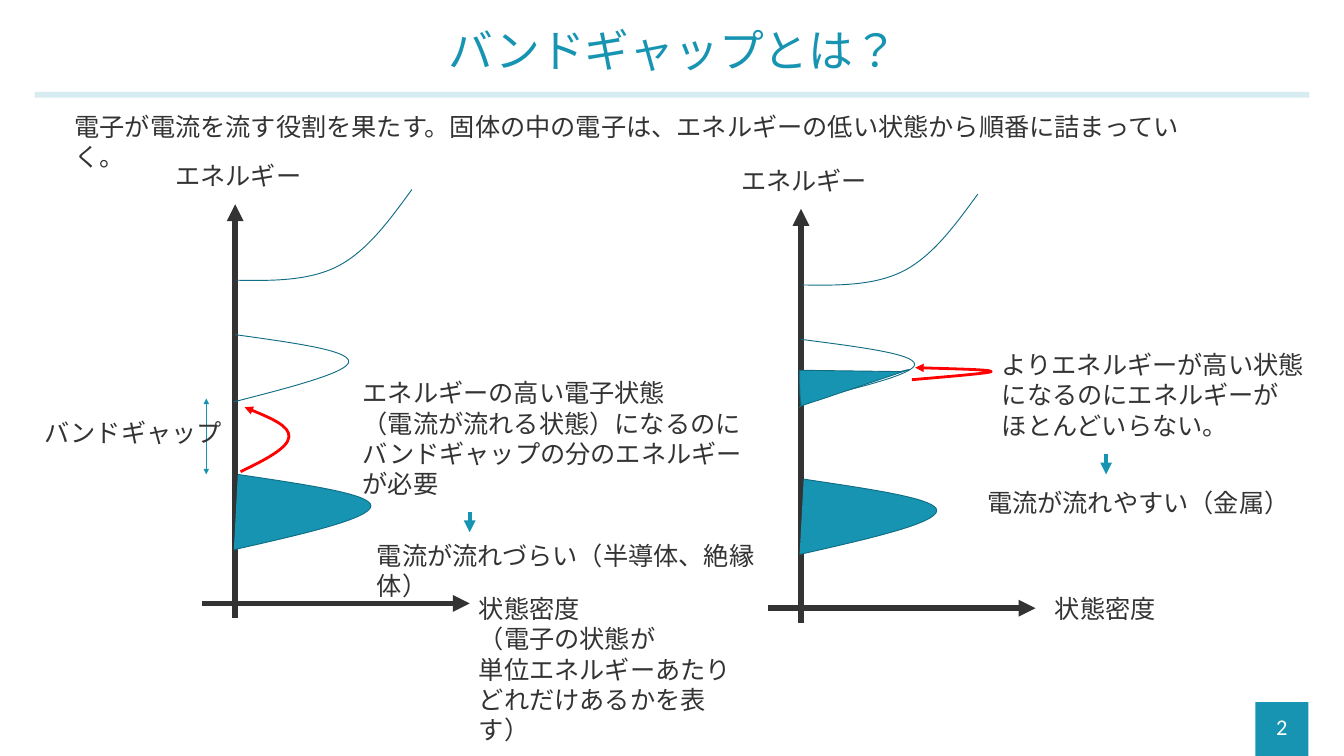
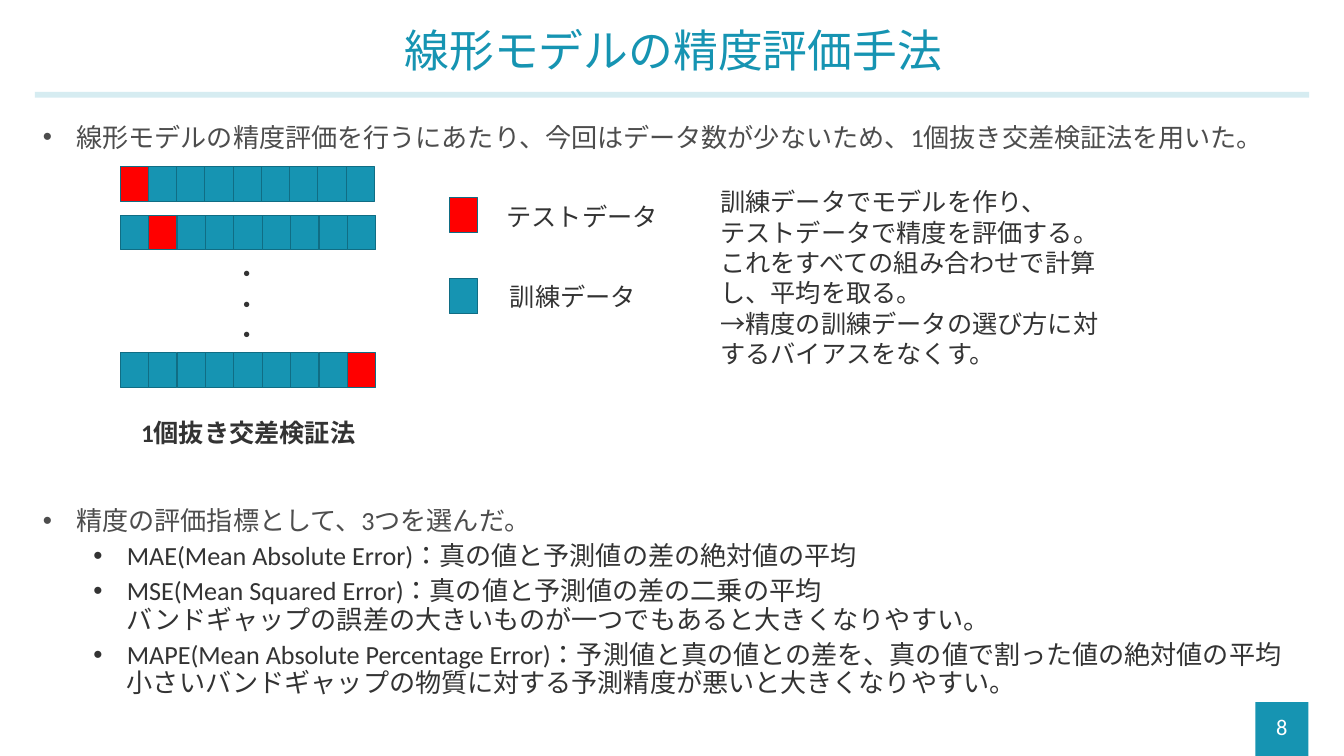
from dataclasses import dataclass

from lxml import etree
from pptx import Presentation
from pptx.dml.color import RGBColor
from pptx.enum.lang import MSO_LANGUAGE_ID
from pptx.enum.shapes import MSO_CONNECTOR, MSO_SHAPE
from pptx.enum.text import MSO_ANCHOR, MSO_AUTO_SIZE, PP_ALIGN
from pptx.oxml.ns import qn
from pptx.util import Inches, Pt

RECT = MSO_SHAPE.RECTANGLE
LINE = MSO_CONNECTOR.STRAIGHT
MIDDLE = MSO_ANCHOR.MIDDLE
CENTER = PP_ALIGN.CENTER
FIXED = MSO_AUTO_SIZE.NONE
GROW = MSO_AUTO_SIZE.SHAPE_TO_FIT_TEXT
JAPANESE = MSO_LANGUAGE_ID.JAPANESE


@dataclass(frozen=True)
class Theme:
    font: str = "Calibri"
    teal: str = "1694B2"
    edge: str = "106D84"
    pale: str = "B7DEE8"
    red: str = "FF0000"
    ink: str = "333333"
    gray: str = "4D4D4D"
    white: str = "FFFFFF"
    title: int = 48
    body: int = 28
    note: int = 27
    page: int = 24


T = Theme()
CELL_W, CELL_H = 0.42, 0.52


# Basic elements

def rgb(code):
    return RGBColor.from_string(code)


def style(par, size, color, bold=None):
    for run in par.runs:
        run.font.name = T.font
        run.font.size = Pt(size)
        run.font.color.rgb = rgb(color)
        run.font.bold = bold
        run.font.language_id = JAPANESE


def label(slide, text, x, y, w, h, size=T.note, color=T.ink, bold=None):
    box = slide.shapes.add_textbox(Inches(x), Inches(y), Inches(w), Inches(h))
    frame = box.text_frame
    frame.word_wrap = True
    frame.auto_size = GROW
    frame.text = text
    for par in frame.paragraphs:
        style(par, size, color, bold)
    return frame


def block(slide, x, y, w, h, fill, edge=None):
    shape = slide.shapes.add_shape(RECT, Inches(x), Inches(y), Inches(w), Inches(h))
    shape.shadow.inherit = False
    shape.fill.solid()
    shape.fill.fore_color.rgb = rgb(fill)
    if edge:
        shape.line.color.rgb = rgb(edge)
        shape.line.width = Pt(1)
    else:
        shape.line.fill.background()


def outline(shape, color, width, ends=()):
    shape.line.color.rgb = rgb(color)
    shape.line.width = Pt(width)
    ln = shape.element.spPr.find(qn("a:ln"))
    for end in ends:
        etree.SubElement(ln, qn(f"a:{end}"), type="triangle")
    return ln


def stroke(slide, start, stop, color, width, ends=("tailEnd",)):
    x1, y1, x2, y2 = (Inches(v) for v in (*start, *stop))
    wire = slide.shapes.add_connector(LINE, x1, y1, x2, y2)
    ln = outline(wire, color, width, ends)
    etree.SubElement(wire.element.spPr, qn("a:effectLst"))
    return ln


def curve(slide, knots, fill=None, color=T.edge, width=1, ends=(), close=False):
    """Joined cubic curves: a start, then two handles and an end for each."""
    points = [(Inches(x), Inches(y)) for x, y in knots]
    pen = slide.shapes.build_freeform(*points[0], scale=1.0)
    pen.add_line_segments(points[3::3], close=close)
    shape = pen.convert_to_shape()
    # Turn each straight segment into a cubic one
    for i, seg in enumerate(list(shape.element.iter(qn("a:lnTo")))):
        cubic = etree.Element(qn("a:cubicBezTo"))
        for x, y in points[3 * i + 1:3 * i + 4]:
            etree.SubElement(cubic, qn("a:pt"),
                             x=str(x - shape.left), y=str(y - shape.top))
        seg.getparent().replace(seg, cubic)
    shape.shadow.inherit = False
    if fill:
        shape.fill.solid()
        shape.fill.fore_color.rgb = rgb(fill)
    else:
        shape.fill.background()
    outline(shape, color, width, ends)


# Shared frame: page mark, rule and title

def start(deck, title, page):
    slide = deck.slides.add_slide(deck.slide_layouts[5])
    block(slide, 18.68, 10.45, 0.79, 0.8, T.teal)
    ln = stroke(slide, (0.52, 1.41), (19.48, 1.41), T.pale, 6.25, ())
    tint = ln.find(f"{qn('a:solidFill')}/{qn('a:srgbClr')}")
    etree.SubElement(tint, qn("a:alpha"), val="56000")

    head = slide.shapes.title
    head.left, head.top = Inches(0.54), Inches(0.16)
    head.width, head.height = Inches(18.96), Inches(1.25)
    frame = head.text_frame
    frame.text = title
    frame.auto_size = FIXED
    frame.vertical_anchor = MIDDLE
    par = frame.paragraphs[0]
    par.alignment = CENTER
    par.line_spacing = 0.9
    style(par, T.title, T.teal)

    mark = label(slide, str(page), 18.67, 10.51, 0.81, 0.6, T.page, T.white)
    mark.auto_size = FIXED
    mark.vertical_anchor = MIDDLE
    mark.paragraphs[0].alignment = CENTER
    return slide


# Band diagram with its axes crossing at (x, y)

def bands(slide, x, y, squash=1.0):
    def at(*knots):
        return [(x + dx, y + dy) for dx, dy in knots]

    stroke(slide, (x, y + 0.22), (x, y - 5.94), T.ink, 6)
    curve(slide, at((0.02, -4.81), (0.56, -4.8), (1.1, -4.8), (1.53, -5.02),
                    (1.97, -5.25), (2.3, -5.71), (2.63, -6.16)))
    label(slide, "エネルギー", x - 0.99, y - 6.64, 2.61, 0.56)
    lobe = ((0, 0), (0.85, 0.12), (1.69, 0.23), (1.69, 0.4),
            (1.69, 0.56), (0.84, 0.78), (-0.02, 1))
    curve(slide, at(*((dx, squash * dy - 4) for dx, dy in lobe)))
    curve(slide, at((0.04, -1.92), (1.04, -1.77), (2.03, -1.63), (2.02, -1.45),
                    (2.01, -1.26), (1, -1.03), (-0.02, -0.8)), T.teal)
    stroke(slide, (x - 0.49, y), (x + 3.49, y), T.ink, 6)


def gap_slide(deck):
    slide = start(deck, "バンドギャップとは？", 2)
    jump = dict(color=T.red, width=3, ends=("tailEnd",))

    # Semiconductor or insulator
    bands(slide, 3.5, 8.98)
    label(slide, "状態密度\n（電子の状態が\n単位エネルギーあたり\nどれだけあるかを表す）",
          7.03, 8.78, 4.24, 1.92)

    # Metal, with a partly filled band
    bands(slide, 11.92, 9.05, 0.93)
    label(slide, "状態密度", 15.6, 8.78, 2.61, 0.56)
    curve(slide, [(11.9, 5.51), (11.9, 5.71), (11.9, 5.92), (11.92, 6),
                  (11.95, 6.08), (11.79, 6.08), (12.04, 6),
                  (12.29, 5.92), (13.44, 5.53), (13.44, 5.53),
                  (13.67, 5.46), (13.4, 5.53), (13.4, 5.53)], T.teal, close=True)

    # Jump across the gap
    curve(slide, [(3.58, 7.02), (3.93, 6.85), (4.29, 6.67), (4.3, 6.5),
                  (4.31, 6.34), (3.98, 6.2), (3.64, 6.06)], **jump)
    label(slide, "エネルギーの高い電子状態\n（電流が流れる状態）になるのに\n"
          "バンドギャップの分のエネルギーが必要", 5.3, 5.57, 6, 1.92)
    stroke(slide, (3.07, 5.93), (3.07, 7.06), T.teal, 0.5, ("headEnd", "tailEnd"))
    label(slide, "バンドギャップ", 0.56, 6.16, 3.37, 0.56)
    label(slide, "電子が電流を流す役割を果たす。固体の中の電子は、"
          "エネルギーの低い状態から順番に詰まっていく。", 1.01, 1.61, 16.87, 0.56)

    # Jump within the band
    curve(slide, [(13.57, 5.65), (14.16, 5.6), (14.74, 5.55), (14.75, 5.53),
                  (14.76, 5.5), (14.19, 5.49), (13.62, 5.47)], **jump)
    label(slide, "よりエネルギーが高い状態になるのにエネルギーがほとんどいらない。",
          14.81, 5.15, 4.69, 1.46)

    # Conclusions
    stroke(slide, (6.99, 7.62), (6.99, 7.92), T.teal, 4.25)
    label(slide, "電流が流れづらい（半導体、絶縁体）", 5.51, 7.99, 6.21, 0.56)
    stroke(slide, (16.46, 6.76), (16.46, 7.06), T.teal, 4.25)
    label(slide, "電流が流れやすい（金属）", 14.59, 7.2, 6.21, 0.56)


# Bulleted text: rows of (level, space before, text)

def bullets(slide, rows, x, y, w, h):
    frame = label(slide, "\n".join(text for _, _, text in rows), x, y, w, h)
    frame.auto_size = FIXED
    for par, (level, space, _) in zip(frame.paragraphs, rows):
        par.level = level
        par.space_before = Pt(space)
        if level:
            par.line_spacing = 0.9
        style(par, T.body, T.ink if level else T.gray)
        props = par._p.get_or_add_pPr()
        props.set("marL", str(Inches(1.25 if level else 0.5)))
        props.set("indent", str(Inches(-0.5)))
        etree.SubElement(props, qn("a:buFont"), typeface="Arial")
        etree.SubElement(props, qn("a:buChar"), char="•")


def cell(slide, x, y, test):
    block(slide, x, y, CELL_W, CELL_H, T.red if test else T.teal, T.edge)


def score_slide(deck):
    slide = start(deck, "線形モデルの精度評価手法", 8)
    # The wide space before the second point leaves room for the diagram
    bullets(slide, [
        (0, 12, "線形モデルの精度評価を行うにあたり、今回はデータ数が少ないため、"
                "1個抜き交差検証法を用いた。"),
        (0, 377.5, "精度の評価指標として、3つを選んだ。"),
        (1, 7.5, "MAE(Mean Absolute Error)：真の値と予測値の差の絶対値の平均"),
        (1, 7.5, "MSE(Mean Squared Error)：真の値と予測値の差の二乗の平均\v"
                 "バンドギャップの誤差の大きいものが一つでもあると大きくなりやすい。"),
        (1, 7.5, "MAPE(Mean Absolute Percentage Error)："
                 "予測値と真の値との差を、真の値で割った値の絶対値の平均\v"
                 "小さいバンドギャップの物質に対する予測精度が悪いと大きくなりやすい。"),
    ], 0.54, 1.75, 18.94, 9.36)
    label(slide, "1個抜き交差検証法", 2, 6.16, 3.71, 0.56, bold=True)

    # Folds: one test cell in each row of nine
    left = 1.79
    for y, last, test in ((2.48, 5.15, 0), (3.2, 5.17, 1), (5.25, 5.17, 8)):
        for i in range(9):
            cell(slide, left + i * (last - left) / 8, y, i == test)
    label(slide, "・\n・\n・", 3.39, 3.8, 1.92, 1.46)

    # Legend
    cell(slide, 6.69, 2.94, True)
    label(slide, "テストデータ", 7.44, 2.94, 3.19, 0.56)
    cell(slide, 6.69, 4.15, False)
    label(slide, "訓練データ", 7.49, 4.13, 3.19, 0.56)

    label(slide, "訓練データでモデルを作り、\vテストデータで精度を評価する。\v"
          "これをすべての組み合わせで計算し、平均を取る。\n"
          "→精度の訓練データの選び方に対するバイアスをなくす。",
          10.62, 2.73, 5.86, 2.83)


def main():
    deck = Presentation()
    deck.slide_width, deck.slide_height = Inches(20), Inches(11.25)
    gap_slide(deck)
    score_slide(deck)
    deck.save("out.pptx")


if __name__ == "__main__":
    main()
